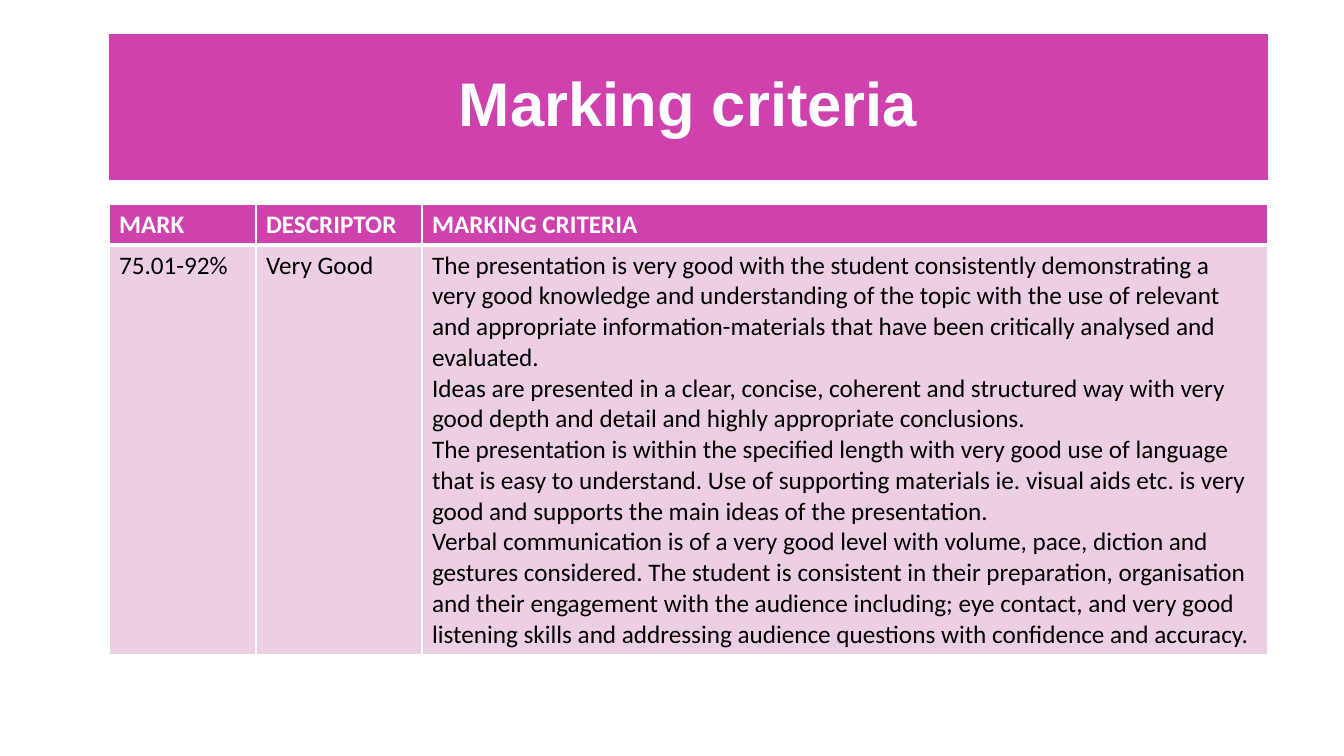
"""Build the marking criteria slide: a title banner above a grading table."""
from lxml.etree import SubElement
from pptx import Presentation
from pptx.dml.color import RGBColor
from pptx.enum.text import MSO_ANCHOR, PP_ALIGN
from pptx.oxml.ns import qn
from pptx.util import Emu, Pt

THEME = {
    "banner": "CF41AD",
    "body_fill": "EDCFE3",
    "light": "FFFFFF",
    "dark": "000000",
    "title_font": "Arial",
    "table_font": "Calibri",
    "title_size": 44,
    "table_size": 18,
    "thin_line": 1,
    "thick_line": 3,
}
LEFT, WIDTH = 109, 1159
COLUMN_WIDTHS = [147, 166, 846]
ROW_HEIGHTS = [41, 404]
ROWS = [
    [["MARK"], ["DESCRIPTOR"], ["MARKING CRITERIA"]],
    [
        ["75.01-92%"],
        ["Very Good"],
        [
            "The presentation is very good with the student consistently demonstrating a very good "
            "knowledge and understanding of the topic with the use of relevant and appropriate "
            "information-materials that have been critically analysed and evaluated.",
            "Ideas are presented in a clear, concise, coherent and structured way with very good "
            "depth and detail and highly appropriate conclusions.",
            "The presentation is within the specified length with very good use of language that is "
            "easy to understand. Use of supporting materials ie. visual aids etc. is very good and "
            "supports the main ideas of the presentation.",
            "Verbal communication is of a very good level with volume, pace, diction and gestures "
            "considered. The student is consistent in their preparation, organisation and their "
            "engagement with the audience including; eye contact, and very good listening skills "
            "and addressing audience questions with confidence and accuracy.",
        ],
    ],
]


def px(length):
    """Turn pixels into EMU."""
    return Emu(round(length * 914400 / 100.8))


def format_font(font, color, **values):
    """Set font attributes and colour."""
    for name, value in values.items():
        setattr(font, name, value)
    font.color.rgb = RGBColor.from_string(color)


presentation = Presentation()
presentation.slide_width, presentation.slide_height = px(1344), px(756)
slide = presentation.slides.add_slide(presentation.slide_layouts[5])

title = slide.shapes.title
title_box = {"left": LEFT, "top": 34, "width": WIDTH, "height": 146}
for name, value in title_box.items():
    setattr(title, name, px(value))
title.fill.solid()
title.fill.fore_color.rgb = RGBColor.from_string(THEME["banner"])
title.text_frame.vertical_anchor = MSO_ANCHOR.MIDDLE
title.text_frame.text = "Marking criteria"
paragraph = title.text_frame.paragraphs[0]
paragraph.alignment = PP_ALIGN.CENTER
paragraph.line_spacing = 0.9
format_font(paragraph.runs[0].font, THEME["light"], name=THEME["title_font"],
            size=Pt(THEME["title_size"]), bold=True)

table = slide.shapes.add_table(len(ROWS), len(COLUMN_WIDTHS), px(LEFT), px(204),
                               px(WIDTH), px(sum(ROW_HEIGHTS))).table
for column, width in zip(table.columns, COLUMN_WIDTHS):
    column.width = px(width)
for row, height in zip(table.rows, ROW_HEIGHTS):
    row.height = px(height)

for row_index, row_texts in enumerate(ROWS):
    is_header = row_index == 0
    fill_color = THEME["banner" if is_header else "body_fill"]
    text_color = THEME["light" if is_header else "dark"]
    thick_side = "lnB" if is_header else "lnT"
    for column_index, texts in enumerate(row_texts):
        cell = table.cell(row_index, column_index)
        cell_properties = cell._tc.get_or_add_tcPr()
        for side in ("lnL", "lnR", "lnT", "lnB"):
            line_width = THEME["thick_line" if side == thick_side else "thin_line"]
            line = SubElement(cell_properties, qn(f"a:{side}"), w=str(Pt(line_width)))
            line_fill = SubElement(line, qn("a:solidFill"))
            SubElement(line_fill, qn("a:srgbClr"), val=THEME["light"])
        cell.fill.solid()
        cell.fill.fore_color.rgb = RGBColor.from_string(fill_color)
        cell.text_frame.text = "\n".join(texts)
        for paragraph in cell.text_frame.paragraphs:
            format_font(paragraph.runs[0].font, text_color, name=THEME["table_font"],
                        size=Pt(THEME["table_size"]), bold=is_header)

presentation.save("out.pptx")
